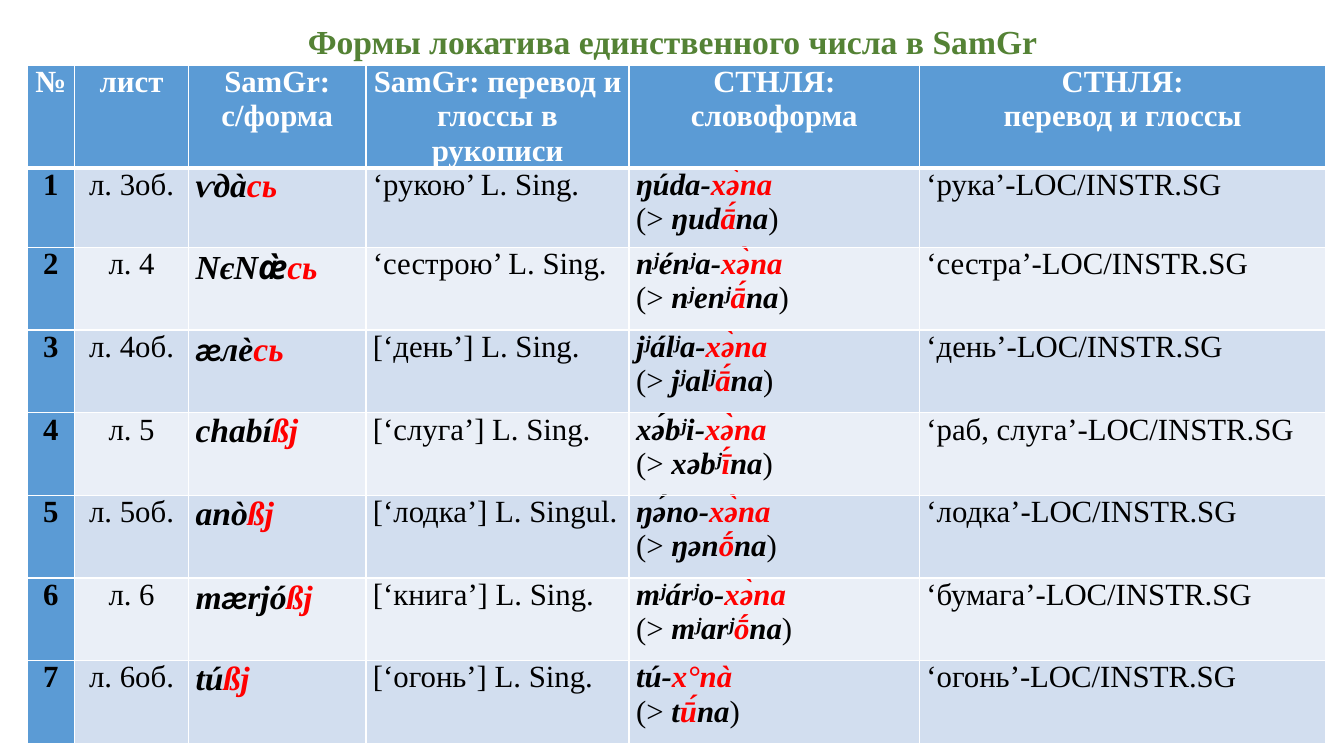
from dataclasses import dataclass

from lxml import etree
from pptx import Presentation
from pptx import util as u
from pptx.dml.color import RGBColor
from pptx.enum import text
from pptx.oxml.ns import qn


@dataclass(frozen=True)
class Theme:
    font: str = "Times New Roman"
    ash_font: str = "Calibri"
    title_size: int = 24
    manuscript_size: int = 24
    cell_size: int = 22
    title: str = "548235"
    header: str = "5B9BD5"
    bands: tuple = ("D2DEEF", "EAEFF7")
    white: str = "FFFFFF"
    black: str = "000000"
    ending: str = "FF0000"


THEME = Theme()
CENTER, LEFT = text.PP_ALIGN.CENTER, text.PP_ALIGN.LEFT

TITLE = "Формы локатива единственного числа в SamGr"
COLUMN_WIDTHS = (0.47, 1.13, 1.76, 2.61, 2.88, 4.03)
HEADER_HEIGHT, FIRST_HEIGHT, ROW_HEIGHT = 0.91, 0.79, 0.82
HEADERS = (
    ("№",),
    ("лист",),
    ("SamGr:", "c/форма"),
    ("SamGr: перевод и глоссы в рукописи",),
    ("СТНЛЯ:", "cловоформа"),
    ("СТНЛЯ:", "перевод и глоссы"),
)
# Sheet; manuscript stem (before ash, ash, after ash) and ending; manuscript
# gloss; full form (stem, ending); contracted form (stem, vowel); translation
ENTRIES = (
    ("3об.", ("ѵдà", "", ""), "сь", "‘рукою’ L. Sing.",
     ("ŋúda-", "xə̀na"), ("ŋud", "ā́"), "рука"),
    ("4", ("NєN", "æ̀", ""), "сь", "‘сестрою’ L. Sing.",
     ("nʲénʲa-", "xə̀na"), ("nʲenʲ", "ā́"), "сестра"),
    ("4об.", ("", "æ", "лè"), "сь", "[‘день’] L. Sing.",
     ("jʲálʲa-", "xə̀na"), ("jʲalʲ", "ā́"), "день"),
    ("5", ("chabí", "", ""), "ßj", "[‘слуга’] L. Sing.",
     ("xə́bʲi-", "xə̀na"), ("xəbʲ", "ī́"), "раб, слуга"),
    ("5об.", ("anò", "", ""), "ßj", "[‘лодка’] L. Singul.",
     ("ŋə́no-", "xə̀na"), ("ŋən", "ṓ"), "лодка"),
    ("6", ("m", "æ", "rjó"), "ßj", "[‘книга’] L. Sing.",
     ("mʲárʲo-", "xə̀na"), ("mʲarʲ", "ṓ"), "бумага"),
    ("6об.", ("tú", "", ""), "ßj", "[‘огонь’] L. Sing.",
     ("tú-", "x°nà"), ("t", "ū́"), "огонь"),
)


def add_run(p, content, size=THEME.cell_size, color=THEME.black,
            bold=False, italic=False, font=THEME.font):
    r = p.add_run()
    r.text = content
    r.font.name, r.font.size = font, u.Pt(size)
    r.font.bold, r.font.italic = bold, italic
    r.font.color.rgb = RGBColor.from_string(color)


def add_form(p, content, color=THEME.black, **style):
    """Add a bold italic piece of a word form."""
    add_run(p, content, color=color, bold=True, italic=True, **style)


def set_borders(cell, widths):
    """Draw white cell borders; widths maps a side letter to points."""
    tc_pr = cell._tc.get_or_add_tcPr()
    for side, width in widths.items():
        ln = etree.SubElement(tc_pr, qn(f"a:ln{side}"), w=str(u.Pt(width)))
        fill = etree.SubElement(ln, qn("a:solidFill"))
        etree.SubElement(fill, qn("a:srgbClr"), val=THEME.white)


def style_cell(cell, fill, top=1, bottom=1):
    cell.margin_left = cell.margin_right = u.Inches(0.07)
    cell.margin_top = cell.margin_bottom = 0
    set_borders(cell, {"L": 1, "R": 1, "T": top, "B": bottom})
    cell.fill.solid()
    cell.fill.fore_color.rgb = RGBColor.from_string(fill)


def cell_paragraphs(cell, count=1, align=LEFT):
    tf = cell.text_frame
    paragraphs = [tf.paragraphs[0]] + [tf.add_paragraph() for _ in range(count - 1)]
    for p in paragraphs:
        p.alignment = align
    return paragraphs


def write_line(cell, content, align=LEFT, bold=False):
    add_run(cell_paragraphs(cell, align=align)[0], content, bold=bold)


def write_manuscript_form(cell, stem, ending):
    p = cell_paragraphs(cell)[0]
    size = THEME.manuscript_size
    for part, font in zip(stem, (THEME.font, THEME.ash_font, THEME.font)):
        if part:
            add_form(p, part, size=size, font=font)
    add_form(p, ending, THEME.ending, size=size)


def write_word_forms(cell, full, contracted):
    first, second = cell_paragraphs(cell, 2)
    add_form(first, full[0])
    add_form(first, full[1], THEME.ending)
    add_run(second, "(> ")
    add_form(second, contracted[0])
    add_form(second, contracted[1], THEME.ending)
    add_form(second, "na")
    add_run(second, ")")


def fill_header(cells):
    for cell, lines in zip(cells, HEADERS):
        style_cell(cell, THEME.header, bottom=3)
        for p, line in zip(cell_paragraphs(cell, len(lines), CENTER), lines):
            add_run(p, line, color=THEME.white, bold=True)


def fill_entry(cells, number, entry):
    sheet, stem, ending, gloss, full, contracted, meaning = entry
    band = THEME.bands[(number - 1) % 2]
    for column, cell in enumerate(cells):
        style_cell(cell, band if column else THEME.header, top=3 if number == 1 else 1)
    write_line(cells[0], str(number), CENTER, bold=True)
    write_line(cells[1], f"л. {sheet}", CENTER)
    write_manuscript_form(cells[2], stem, ending)
    write_line(cells[3], gloss)
    write_word_forms(cells[4], full, contracted)
    write_line(cells[5], f"‘{meaning}’-LOC/INSTR.SG")


def add_forms_table(slide):
    heights = [HEADER_HEIGHT, FIRST_HEIGHT] + [ROW_HEIGHT] * (len(ENTRIES) - 1)
    table = slide.shapes.add_table(
        len(heights), len(COLUMN_WIDTHS), u.Inches(0.27), u.Inches(0.65),
        u.Inches(sum(COLUMN_WIDTHS)), u.Inches(sum(heights))).table
    for column, width in zip(table.columns, COLUMN_WIDTHS):
        column.width = u.Inches(width)
    for row, height in zip(table.rows, heights):
        row.height = u.Inches(height)
    header, *rows = [list(row.cells) for row in table.rows]
    fill_header(header)
    for number, (cells, entry) in enumerate(zip(rows, ENTRIES), 1):
        fill_entry(cells, number, entry)


def set_title(slide):
    sp = slide.shapes.title
    sp.left, sp.top = u.Inches(0.92), u.Inches(0.22)
    sp.width, sp.height = u.Inches(11.5), u.Inches(0.43)
    tf = sp.text_frame
    tf.word_wrap = True
    tf.auto_size = text.MSO_AUTO_SIZE.NONE
    tf.vertical_anchor = text.MSO_ANCHOR.MIDDLE
    p = tf.paragraphs[0]
    p.alignment, p.line_spacing = CENTER, 0.9
    add_run(p, TITLE, THEME.title_size, THEME.title, bold=True)


def main():
    prs = Presentation()
    prs.slide_width, prs.slide_height = u.Inches(13.33), u.Inches(7.5)
    slide = prs.slides.add_slide(prs.slide_layouts[5])
    set_title(slide)
    add_forms_table(slide)
    prs.save("out.pptx")


if __name__ == "__main__":
    main()
